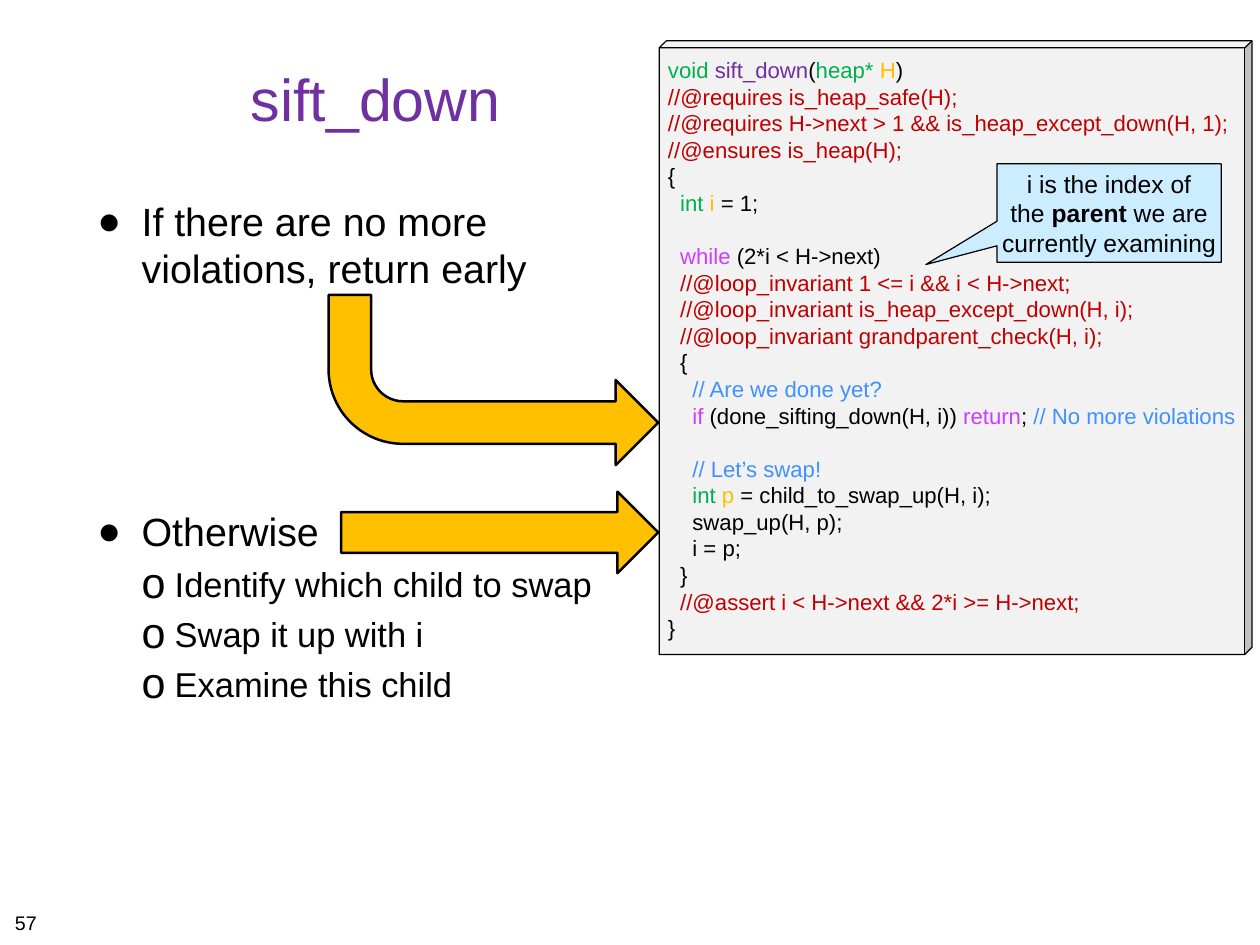
from lxml import etree
from pptx import Presentation
from pptx.dml.color import RGBColor
from pptx.enum import shapes as sh, text as tx
from pptx.oxml import ns
from pptx.util import Cm, Pt

BLACK = RGBColor(0x00, 0x00, 0x00)
PURPLE = RGBColor(0x70, 0x30, 0xA0)
GREEN = RGBColor(0x00, 0xB0, 0x50)
AMBER = RGBColor(0xFF, 0xC0, 0x00)
RED = RGBColor(0xC0, 0x00, 0x00)
VIOLET = RGBColor(0xD0, 0x3B, 0xFF)
BLUE = RGBColor(0x40, 0x91, 0xFF)
PANEL = RGBColor(0xF2, 0xF2, 0xF2)
PALE_BLUE = RGBColor(0xCC, 0xEC, 0xFF)

LINE_PITCH = 1.2
CODE_SIZE = 18
CODE_INDENT = 0.35


def write(frame, runs, size, color=BLACK, align=tx.PP_ALIGN.LEFT, before=0,
          indent=0, hanging=0, bullet=None, bullet_scale=100):
    paragraph = frame.paragraphs[0]
    if paragraph.runs:
        paragraph = frame.add_paragraph()
    paragraph.alignment = align
    paragraph.line_spacing = Pt(size * LINE_PITCH)
    paragraph.space_before = Pt(before)
    props = paragraph._p.get_or_add_pPr()
    props.set("marL", str(Cm(indent)))
    props.set("indent", str(Cm(-hanging)))
    if bullet:
        etree.SubElement(props, ns.qn("a:buSzPct"), val=str(bullet_scale * 1000))
        etree.SubElement(props, ns.qn("a:buFont"), typeface="Arial")
        etree.SubElement(props, ns.qn("a:buChar"), char=bullet)
    if isinstance(runs, str):
        runs = [(runs, color)]
    for words, run_color, *bold in runs:
        for number, piece in enumerate(words.split("\n")):
            if number:
                paragraph.add_line_break()
            run = paragraph.add_run()
            run.text = piece
            run.font.name = "Arial"
            run.font.size = Pt(size)
            run.font.bold = bool(bold)
            run.font.color.rgb = run_color


def place(kind, left, top, width, height, fill=None, line=1, inset=0.15,
          anchor=tx.MSO_ANCHOR.TOP, wrap=False):
    box = (Cm(left), Cm(top), Cm(width), Cm(height))
    if kind is None:
        part = slide.shapes.add_textbox(*box)
    else:
        part = slide.shapes.add_shape(kind, *box)
        part.shadow.inherit = False
        part.fill.solid()
        part.fill.fore_color.rgb = fill
        part.line.color.rgb = BLACK
        part.line.width = Pt(line)
    frame = part.text_frame
    frame.word_wrap = wrap
    frame.vertical_anchor = anchor
    frame.margin_left = frame.margin_right = Cm(inset)
    frame.margin_top = frame.margin_bottom = Cm(inset)
    return part


deck = Presentation()
deck.slide_width = Cm(36.12)
deck.slide_height = Cm(27.1)
slide = deck.slides.add_slide(deck.slide_layouts[6])

title = place(None, 2.64, 0.71, 16.26, 4.17, anchor=tx.MSO_ANCHOR.MIDDLE, wrap=True)
write(title.text_frame, "sift_down", 48, color=PURPLE, align=tx.PP_ALIGN.CENTER)

steps = place(None, 2.64, 5.51, 30.84, 19.15, wrap=True).text_frame
for point, gap in [("If there are no more\nviolations, return early", 0), ("Otherwise", 175)]:
    write(steps, point, 32, before=gap, indent=1.27, hanging=1.27, bullet="●")
for action in ["Identify which child to swap", "Swap it up with i", "Examine this child"]:
    write(steps, action, 28, before=7, indent=2.22, hanging=0.95,
          bullet="o", bullet_scale=125)

page_number = place(None, 0.28, 25.98, 0.94, 0.89)
write(page_number.text_frame, "57", 16)

listing = place(sh.MSO_SHAPE.CUBE, 18.9, 1.17, 16.99, 17.6, fill=PANEL)
listing.adjustments[0] = 0.012
code = listing.text_frame
code.margin_left = code.margin_top = code.margin_bottom = Cm(0.25)

code_lines = [
    (0, 0, [("void ", GREEN), ("sift_down", PURPLE), ("(", BLACK),
            ("heap* ", GREEN), ("H", AMBER), (")", BLACK)]),
    (0, 0, [("//@requires is_heap_safe(H);", RED)]),
    (0, 0, [("//@requires H->next > 1 && is_heap_except_down(H, 1);", RED)]),
    (0, 0, [("//@ensures is_heap(H);", RED)]),
    (0, 0, [("{", BLACK)]),
    (1, 0, [("int ", GREEN), ("i", AMBER), (" = 1;", BLACK)]),
    (1, 1, [("while ", VIOLET), ("(2*i < H->next)", BLACK)]),
    (1, 0, [("//@loop_invariant 1 <= i && i < H->next;", RED)]),
    (1, 0, [("//@loop_invariant is_heap_except_down(H, i);", RED)]),
    (1, 0, [("//@loop_invariant grandparent_check(H, i);", RED)]),
    (1, 0, [("{", BLACK)]),
    (2, 0, [("// Are we done yet?", BLUE)]),
    (2, 0, [("if ", VIOLET), ("(done_sifting_down(H, i))", BLACK),
            (" return", VIOLET), ("; ", BLACK), ("// No more violations", BLUE)]),
    (2, 1, [("// Let’s swap!", BLUE)]),
    (2, 0, [("int ", GREEN), ("p", AMBER), (" = child_to_swap_up(H, i);", BLACK)]),
    (2, 0, [("swap_up(H, p);", BLACK)]),
    (2, 0, [("i = p;", BLACK)]),
    (1, 0, [("}", BLACK)]),
    (1, 0, [("//@assert i < H->next && 2*i >= H->next;", RED)]),
    (0, 0, [("}", BLACK)]),
]
for depth, skipped, tokens in code_lines:
    write(code, tokens, CODE_SIZE, indent=depth * CODE_INDENT,
          before=skipped * CODE_SIZE * LINE_PITCH)

index_note = place(sh.MSO_SHAPE.RECTANGULAR_CALLOUT, 28.58, 4.7, 6.43, 2.82,
                   fill=PALE_BLUE, inset=0.13, anchor=tx.MSO_ANCHOR.MIDDLE)
index_note.adjustments[0] = -0.817
index_note.adjustments[1] = 0.524
write(index_note.text_frame,
      [("i is the index of\nthe ", BLACK), ("parent", BLACK, True),
       (" we are\ncurrently examining", BLACK)],
      20, align=tx.PP_ALIGN.CENTER)

place(sh.MSO_SHAPE.RIGHT_ARROW, 9.78, 14.1, 9.09, 2.34, fill=AMBER, line=2)
early_return = place(sh.MSO_SHAPE.BENT_ARROW, 9.42, 8.46, 9.45, 4.88, fill=AMBER, line=2)
early_return._element.spPr.find(ns.qn("a:xfrm")).set("flipV", "1")

deck.save("out.pptx")
